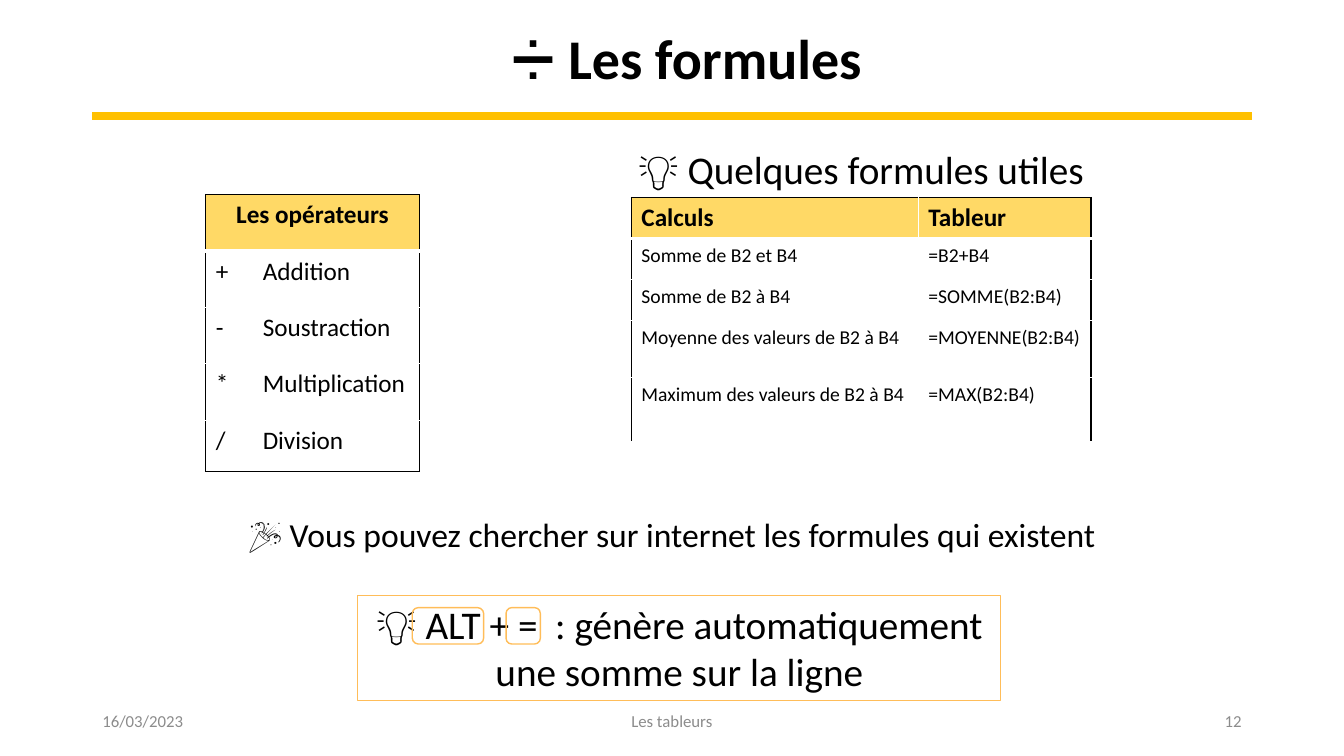
"""Build the slide on spreadsheet formulas."""
import lxml.etree
import pptx
import pptx.dml.color
import pptx.enum.shapes
import pptx.enum.text
import pptx.oxml.ns
import pptx.util

Pt = pptx.util.Pt
ALIGN = pptx.enum.text.PP_ALIGN
ANCHOR = pptx.enum.text.MSO_ANCHOR
SHAPE = pptx.enum.shapes.MSO_SHAPE
FONT = "Calibri"
BLACK, WHITE, GREY = "000000", "FFFFFF", "8C8C8C"
GOLD, HEADER_GOLD, FRAME_GOLD = "FFC000", "FFD966", "FFBD59"


def rgb(code):
    """Return the colour for a hex string."""
    return pptx.dml.color.RGBColor.from_string(code)


def points(*values):
    """Return the values as lengths in points."""
    return [Pt(value) for value in values]


def write(frame, text, size, color=BLACK, align=ALIGN.LEFT, bold=False):
    """Write one paragraph in a text frame and return it."""
    paragraph = frame.paragraphs[0]
    paragraph.text = text
    paragraph.alignment = align
    font = paragraph.font
    font.name, font.size, font.bold = FONT, Pt(size), bold
    font.color.rgb = rgb(color)
    return paragraph


def add_text(slide, box, text, size, anchor=ANCHOR.TOP, **style):
    """Add a wrapped text box and return its paragraph."""
    frame = slide.shapes.add_textbox(*points(*box)).text_frame
    frame.word_wrap = True
    frame.vertical_anchor = anchor
    return write(frame, text, size, **style)


def add_frame(slide, kind, box, width):
    """Add an unfilled gold outline."""
    outline = slide.shapes.add_shape(kind, *points(*box))
    outline.shadow.inherit = False
    outline.fill.background()
    outline.line.color.rgb = rgb(FRAME_GOLD)
    outline.line.width = Pt(width)
    return outline


def add_rule(slide, left, right, y):
    """Add the thick gold rule under the title."""
    rule = slide.shapes.add_connector(
        pptx.enum.shapes.MSO_CONNECTOR.STRAIGHT, *points(left, y, right, y))
    rule.line.color.rgb = rgb(GOLD)
    rule.line.width = Pt(6)
    lxml.etree.SubElement(rule._element.spPr, pptx.oxml.ns.qn("a:effectLst"))


def set_borders(cell, borders):
    """Set the left, right, top and bottom borders of a cell."""
    properties = cell._tc.get_or_add_tcPr()
    for index, (side, (color, width)) in enumerate(zip("LRTB", borders)):
        border = lxml.etree.Element(pptx.oxml.ns.qn(f"a:ln{side}"), w=str(Pt(width)))
        fill = lxml.etree.SubElement(border, pptx.oxml.ns.qn("a:solidFill"))
        lxml.etree.SubElement(fill, pptx.oxml.ns.qn("a:srgbClr"), val=color)
        properties.insert(index, border)


def add_grid(slide, left, top, widths, heights, rows, body_size, closed):
    """Add a table with a gold header and a black outer edge."""
    table = slide.shapes.add_table(
        len(rows), len(widths),
        *points(left, top, sum(widths), sum(heights))).table
    table.horz_banding = False
    for column, width in zip(table.columns, widths):
        column.width = Pt(width)
    for row, height in zip(table.rows, heights):
        row.height = Pt(height)
    last_row, last_column = len(rows) - 1, len(widths) - 1
    inner, outer, under_header = (WHITE, 1), (BLACK, 1), (WHITE, 3)
    for r, texts in enumerate(rows):
        header = r == 0
        merged = len(texts) == 1
        if merged:
            table.cell(r, 0).merge(table.cell(r, last_column))
        for c, text in enumerate(texts):
            cell = table.cell(r, c)
            cell.fill.solid()
            cell.fill.fore_color.rgb = rgb(HEADER_GOLD if header else WHITE)
            write(cell.text_frame, text, 18 if header else body_size, bold=header,
                  align=ALIGN.CENTER if merged else ALIGN.LEFT)
            bottom = outer if closed and r == last_row else inner
            set_borders(cell, [
                outer if c == 0 else inner,
                outer if merged or c == last_column else inner,
                outer if header else under_header if r == 1 else inner,
                under_header if header else bottom,
            ])


def main():
    """Build and save the slide."""
    deck = pptx.Presentation()
    deck.slide_width, deck.slide_height = points(960, 540)
    slide = deck.slides.add_slide(deck.slide_layouts[6])

    add_rule(slide, 66, 894, 83)
    add_text(slide, (437, 100, 356, 41), "💡 Quelques formules utiles", 28,
             align=ALIGN.CENTER)
    title = add_text(slide, (76.5, -8.5, 828, 104.5), "➗ Les formules", 40,
                     anchor=ANCHOR.MIDDLE, align=ALIGN.CENTER, bold=True)
    title.line_spacing = 0.9

    operators = [("Les opérateurs",), ("+", "Addition"), ("-", "Soustraction"),
                 ("*", "Multiplication"), ("/", "Division")]
    add_grid(slide, 147, 139, (33.5, 119), (40.3,) * 4 + (36.5,), operators, 18, True)
    formulas = [("Calculs", "Tableur"),
                ("Somme de B2 et B4", "=B2+B4"),
                ("Somme de B2 à B4", "=SOMME(B2:B4)"),
                ("Moyenne des valeurs de B2 à B4", "=MOYENNE(B2:B4)"),
                ("Maximum des valeurs de B2 à B4", "=MAX(B2:B4)")]
    add_grid(slide, 451, 141, (205, 123.3), (29.4,) * 3 + (40.7, 45.5),
             formulas, 14, False)

    footer = [(66, 216, "16/03/2023", ALIGN.LEFT),
              (318, 324, "Les tableurs", ALIGN.CENTER),
              (678, 216, "12", ALIGN.RIGHT)]
    for left, width, text, align in footer:
        add_text(slide, (left, 500.5, width, 28.8), text, 12,
                 anchor=ANCHOR.MIDDLE, color=GREY, align=align)

    add_text(slide, (107, 363.5, 746, 36),
             "🎉 Vous pouvez chercher sur internet les formules qui existent", 24,
             align=ALIGN.CENTER)
    shortcut = add_frame(slide, SHAPE.RECTANGLE, (255.5, 425.5, 459.5, 75), 0.75)
    shortcut.text_frame.word_wrap = True
    shortcut.text_frame.vertical_anchor = ANCHOR.TOP
    write(shortcut.text_frame,
          "💡 ALT + =  : génère automatiquement une somme sur la ligne", 28,
          align=ALIGN.CENTER)
    for left, width in ((294.5, 51), (361.5, 24.5)):
        add_frame(slide, SHAPE.ROUNDED_RECTANGLE, (left, 434, width, 26), 1)

    deck.save("out.pptx")


if __name__ == "__main__":
    main()
